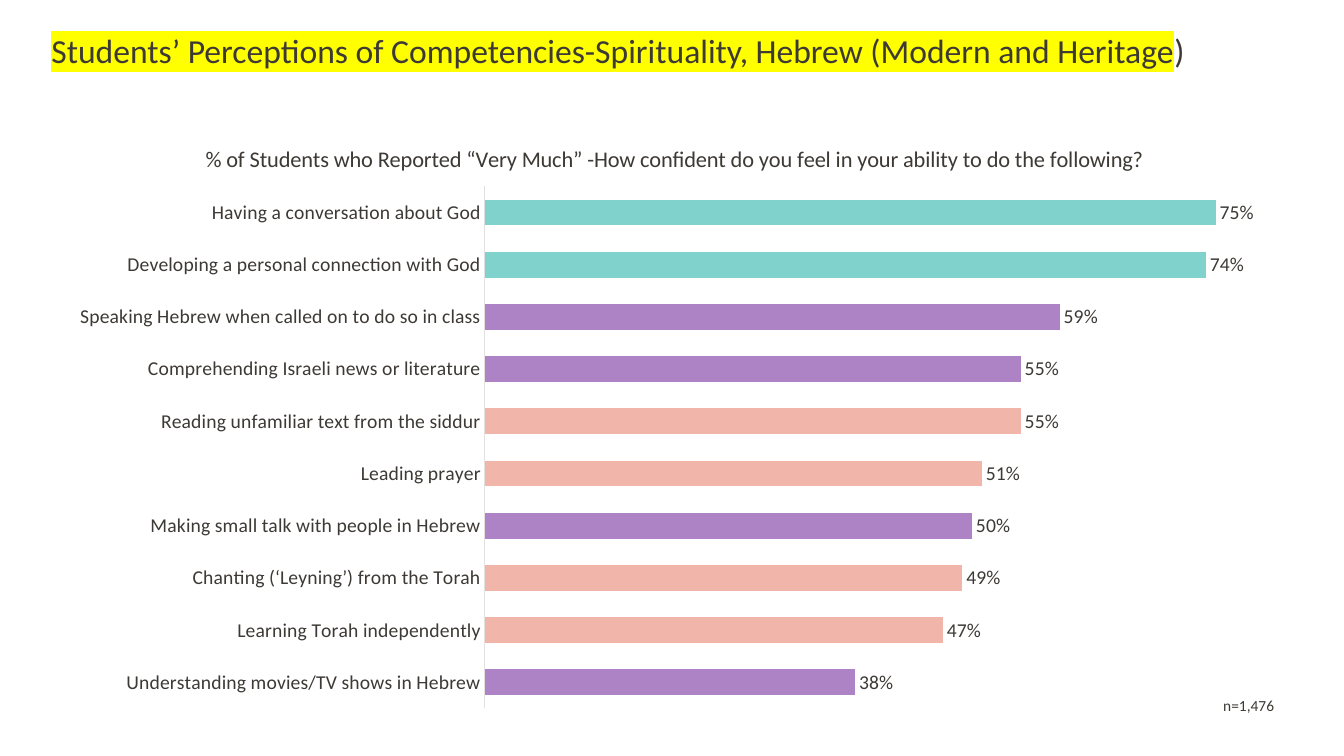
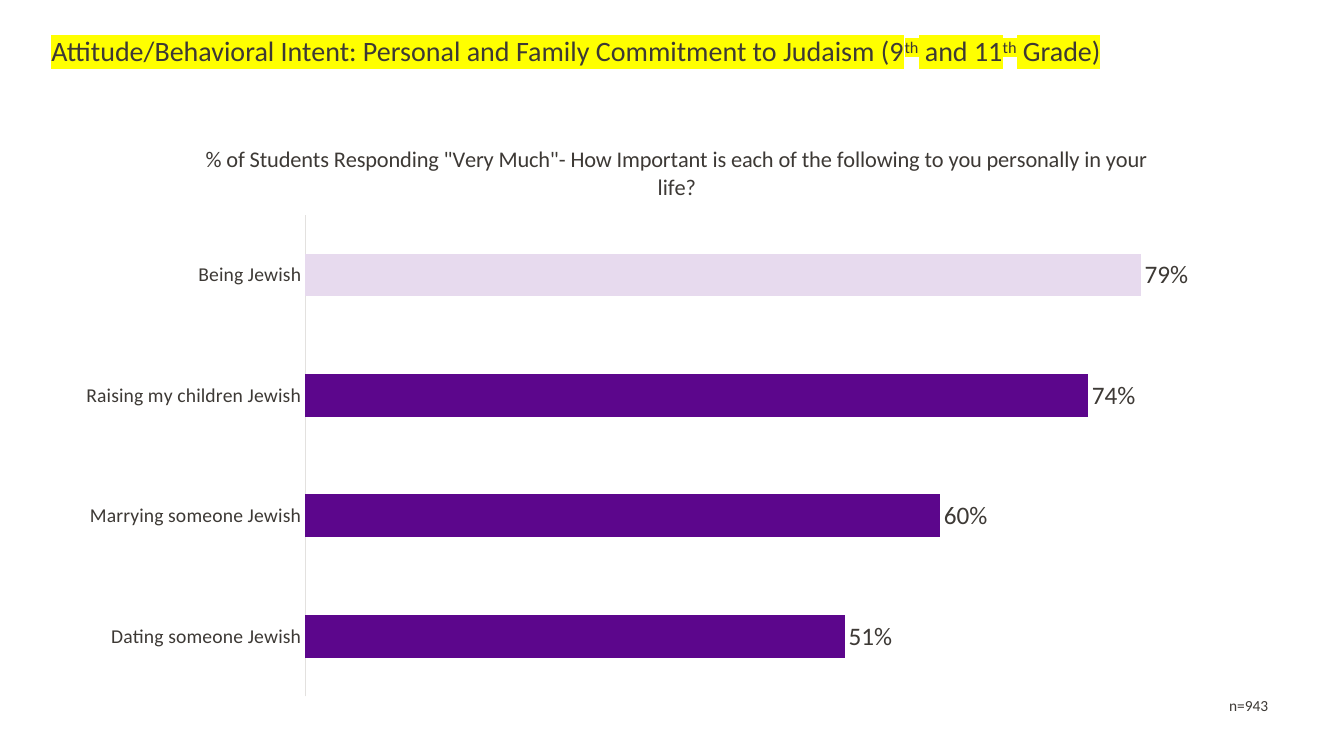
import pptx
import pptx.chart.data
import pptx.dml.color
import pptx.enum.chart
import pptx.enum.text
import pptx.oxml
import pptx.oxml.ns
import pptx.util

Inches = pptx.util.Inches
Pt = pptx.util.Pt
RGBColor = pptx.dml.color.RGBColor

INK = RGBColor(0x3D, 0x39, 0x35)
AXIS = RGBColor(0xE3, 0xE1, 0xDF)
PURPLE = RGBColor(0x5C, 0x06, 0x8C)
TEAL = RGBColor(0x80, 0xD2, 0xCC)
LILAC = RGBColor(0xAD, 0x83, 0xC6)
CORAL = RGBColor(0xF2, 0xB5, 0xAA)
PALE = RGBColor(0xE7, 0xDA, 0xEE)
YELLOW = RGBColor(0xFF, 0xFF, 0x00)
FONT = "Calibri"
CHART_TITLE_CORNER = (2, 1.39)

SLIDES = [
    {
        "title": [
            ("Students’ Perceptions of Competencies-Spirituality, Hebrew (Modern and Heritage", "marked"),
            (")", "plain"),
        ],
        "title_size": 24,
        "title_width": 12.66,
        "chart_title": "% of Students who Reported “Very Much” -How confident do you feel in your ability to do the following?",
        "frame": (0.56, 1.15, 12.22, 6),
        "plot": (4.81, 1.85, 7.73, 5.18),
        "maximum": 0.8,
        "gap": 102,
        "label_size": 14,
        "bars": [
            ("Having a conversation about God", 0.75, TEAL),
            ("Developing a personal connection with God", 0.74, TEAL),
            ("Speaking Hebrew when called on to do so in class", 0.59, LILAC),
            ("Comprehending Israeli news or literature", 0.55, LILAC),
            ("Reading unfamiliar text from the siddur", 0.55, CORAL),
            ("Leading prayer", 0.51, CORAL),
            ("Making small talk with people in Hebrew", 0.5, LILAC),
            ("Chanting (‘Leyning’) from the Torah", 0.49, CORAL),
            ("Learning Torah independently", 0.47, CORAL),
            ("Understanding movies/TV shows in Hebrew", 0.38, LILAC),
        ],
        "sample": "n=1,476",
    },
    {
        "title": [
            ("Attitude/Behavioral Intent: Personal and Family Commitment to Judaism (9", "marked"),
            ("th", "raised"),
            (" and 11", "marked"),
            ("th", "raised"),
            (" Grade)", "marked"),
        ],
        "title_size": 20,
        "title_width": 12.92,
        "chart_title": "% of Students Responding \"Very Much\"- How Important is each of the following to you personally in your life?",
        "frame": (0.61, 1.17, 12.11, 5.87),
        "plot": (3.03, 2.13, 9.44, 4.78),
        "maximum": 0.9,
        "gap": 182,
        "label_size": 18,
        "bars": [
            ("Being Jewish", 0.79, PALE),
            ("Raising my children Jewish", 0.74, PURPLE),
            ("Marrying someone Jewish", 0.6, PURPLE),
            ("Dating someone Jewish", 0.51, PURPLE),
        ],
        "sample": "n=943",
    },
]


def style_font(font, size):
    font.name = FONT
    font.size = Pt(size)
    font.bold = False
    font.color.rgb = INK


def add_span(para, text, size):
    span = para.add_run()
    span.text = text
    style_font(span.font, size)
    return span


def highlight(span):
    namespace = pptx.oxml.ns.nsdecls("a")
    mark = pptx.oxml.parse_xml(
        f'<a:highlight {namespace}><a:srgbClr val="{YELLOW}"/></a:highlight>'
    )
    span.font._element.find(pptx.oxml.ns.qn("a:solidFill")).addnext(mark)


def add_title(page, content):
    title = page.shapes.title
    title.left, title.top = Inches(0.41), Inches(0.06)
    title.width, title.height = Inches(content["title_width"]), Inches(0.92)
    frame = title.text_frame
    frame.auto_size = pptx.enum.text.MSO_AUTO_SIZE.NONE
    frame.vertical_anchor = pptx.enum.text.MSO_ANCHOR.MIDDLE
    para = frame.paragraphs[0]
    para.alignment = pptx.enum.text.PP_ALIGN.LEFT
    para.line_spacing = 0.9
    for text, style in content["title"]:
        span = add_span(para, text, content["title_size"])
        if style != "plain":
            highlight(span)
        if style == "raised":
            span.font._element.set("baseline", "30000")


def set_layout(parent, index, frame, area, inner=False):
    left, top, width, height = frame
    places = {"x": (area[0] - left) / width, "y": (area[1] - top) / height}
    if len(area) == 4:
        places.update(w=area[2] / width, h=area[3] / height)
    target = '<c:layoutTarget val="inner"/>' if inner else ""
    modes = "".join(f'<c:{axis}Mode val="edge"/>' for axis in "xy")
    values = "".join(f'<c:{key} val="{value:.4f}"/>' for key, value in places.items())
    namespace = pptx.oxml.ns.nsdecls("c")
    layout = pptx.oxml.parse_xml(
        f"<c:layout {namespace}><c:manualLayout>{target}{modes}{values}</c:manualLayout></c:layout>"
    )
    for old in parent.findall(pptx.oxml.ns.qn("c:layout")):
        parent.remove(old)
    parent.insert(index, layout)


def add_bar_chart(page, content):
    names, values, colors = zip(*content["bars"])
    data = pptx.chart.data.CategoryChartData(number_format="0%")
    data.categories = names
    data.add_series("Series 1", values)
    frame = content["frame"]
    chart = page.shapes.add_chart(
        pptx.enum.chart.XL_CHART_TYPE.BAR_CLUSTERED, *map(Inches, frame), data
    ).chart
    style_font(chart.font, content["label_size"])
    chart.has_legend = False
    chart.has_title = True
    add_span(chart.chart_title.text_frame.paragraphs[0], content["chart_title"], 16)

    category_axis = chart.category_axis
    category_axis.reverse_order = True
    category_axis.major_tick_mark = pptx.enum.chart.XL_TICK_MARK.NONE
    category_axis.format.line.color.rgb = AXIS
    category_axis.format.line.width = Pt(0.75)
    style_font(category_axis.tick_labels.font, 14)

    value_axis = chart.value_axis
    value_axis.minimum_scale = 0
    value_axis.maximum_scale = content["maximum"]
    value_axis.has_major_gridlines = False
    value_axis.visible = False

    plot = chart.plots[0]
    plot.gap_width = content["gap"]
    plot.vary_by_categories = False
    plot.has_data_labels = True
    labels = plot.data_labels
    labels.show_value = True
    labels.number_format = "0%"
    labels.number_format_is_linked = False
    labels.position = pptx.enum.chart.XL_LABEL_POSITION.OUTSIDE_END
    style_font(labels.font, content["label_size"])

    series = plot.series[0]
    series.invert_if_negative = False
    series.format.fill.solid()
    series.format.fill.fore_color.rgb = PURPLE
    for index, color in enumerate(colors):
        if color != PURPLE:
            fill = series.points[index].format.fill
            fill.solid()
            fill.fore_color.rgb = color

    root = chart.element
    set_layout(root.xpath("c:chart/c:title")[0], 1, frame, CHART_TITLE_CORNER)
    set_layout(root.xpath("c:chart/c:plotArea")[0], 0, frame, content["plot"], inner=True)


def add_sample(page, text):
    box = page.shapes.add_textbox(*map(Inches, (11.88, 6.86, 1.01, 0.29)))
    frame = box.text_frame
    frame.word_wrap = True
    frame.auto_size = pptx.enum.text.MSO_AUTO_SIZE.SHAPE_TO_FIT_TEXT
    para = frame.paragraphs[0]
    para.alignment = pptx.enum.text.PP_ALIGN.CENTER
    add_span(para, text, 11)


def main():
    deck = pptx.Presentation()
    deck.slide_width, deck.slide_height = Inches(13.33), Inches(7.5)
    for content in SLIDES:
        page = deck.slides.add_slide(deck.slide_layouts[5])
        add_title(page, content)
        add_bar_chart(page, content)
        add_sample(page, content["sample"])
    deck.save("out.pptx")


if __name__ == "__main__":
    main()
